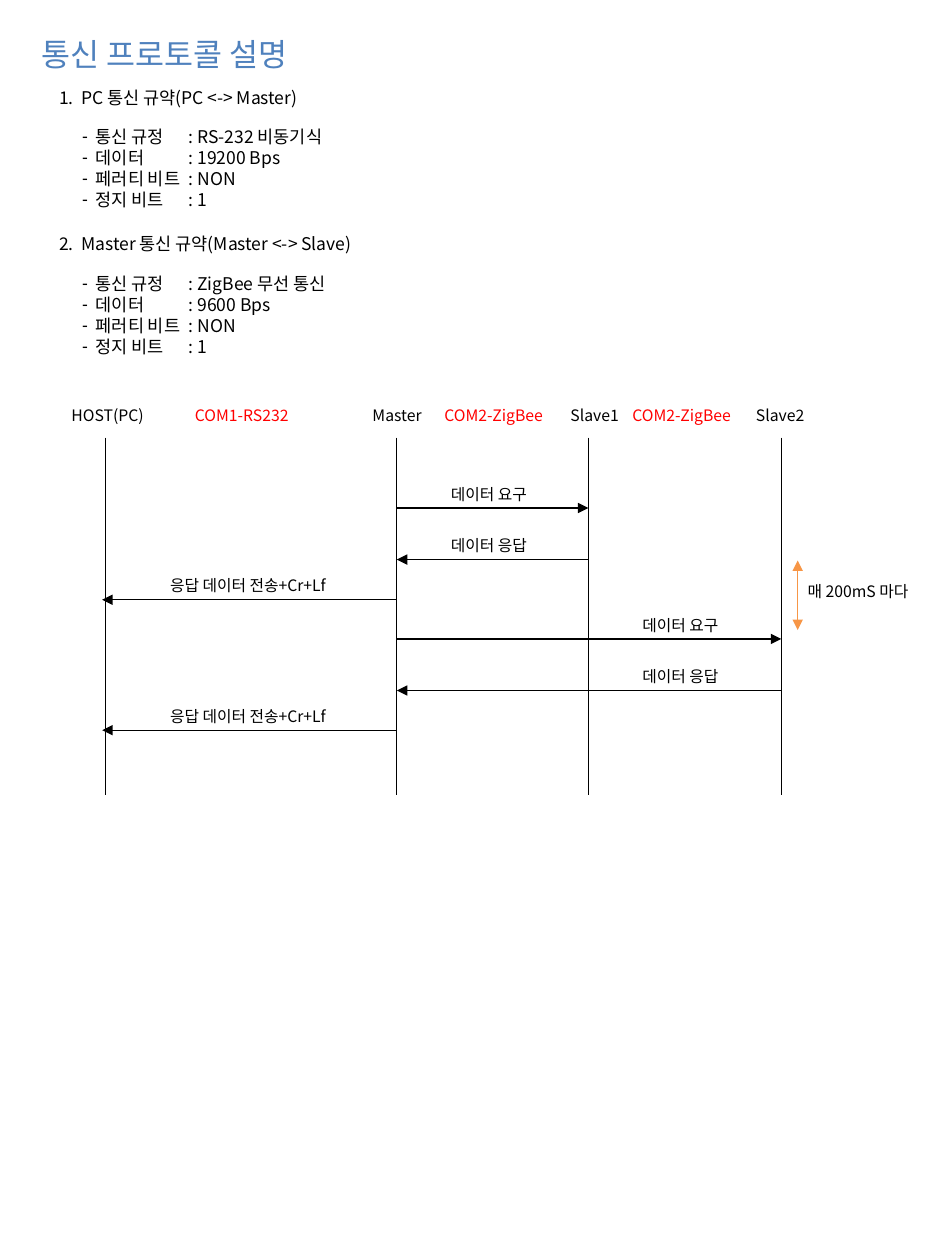
from lxml import etree
from pptx import Presentation
from pptx.dml.color import RGBColor
from pptx.enum.shapes import MSO_CONNECTOR
from pptx.enum.text import MSO_ANCHOR, MSO_AUTO_SIZE, PP_ALIGN
from pptx.oxml.ns import qn
from pptx.util import Cm, Pt

STRAIGHT = MSO_CONNECTOR.STRAIGHT
TOP = MSO_ANCHOR.TOP
NO_FIT = MSO_AUTO_SIZE.NONE
LEFT, JUSTIFY = PP_ALIGN.LEFT, PP_ALIGN.JUSTIFY
BLACK = RGBColor(0x00, 0x00, 0x00)
RED = RGBColor(0xFF, 0x00, 0x00)
BLUE = RGBColor(0x4F, 0x81, 0xBD)
ORANGE = RGBColor(0xF7, 0x96, 0x46)
FONT = "Noto Sans CJK KR"

SECTIONS = [
    ("1.\tPC 통신 규약(PC <-> Master)", "RS-232 비동기식", "19200 Bps"),
    ("2.\tMaster 통신 규약(Master <-> Slave)", "ZigBee 무선 통신", "9600 Bps"),
]
REQUEST, REPLY, FORWARD = "데이터 요구", "데이터 응답", "응답 데이터 전송+Cr+Lf"


def place(shape, left, top, width, height):
    """Move a shape to a box given in centimetres."""
    shape.left, shape.top = Cm(left), Cm(top)
    shape.width, shape.height = Cm(width), Cm(height)


def write(shape, lines, size, color, align=LEFT):
    """Fill a shape with one formatted paragraph per line."""
    frame = shape.text_frame
    frame.text = "\n".join(lines)
    frame.word_wrap = True
    frame.auto_size = NO_FIT
    frame.vertical_anchor = TOP
    for para in frame.paragraphs:
        para.alignment = align
        para.space_before = Pt(0)
        para.line_spacing = Pt(size * 1.2)
        font = para.font
        font.name, font.size, font.bold = FONT, Pt(size), False
        font.color.rgb = color
        east_asian = etree.SubElement(para._p.pPr.find(qn("a:defRPr")), qn("a:ea"))
        east_asian.set("typeface", FONT)


def set_list(para, indent, bullet=None, tab=None):
    """Give a paragraph a hanging indent, a bullet or none, and a tab stop."""
    properties = para._p.get_or_add_pPr()
    properties.set("marL", str(Cm(indent)))
    properties.set("indent", str(-Cm(indent)))
    defaults = properties.find(qn("a:defRPr"))
    mark = etree.Element(qn("a:buChar" if bullet else "a:buNone"))
    if bullet:
        mark.set("char", bullet)
    defaults.addprevious(mark)
    if tab:
        stops = etree.Element(qn("a:tabLst"))
        etree.SubElement(stops, qn("a:tab"), pos=str(Cm(tab)), algn="l")
        defaults.addprevious(stops)


def add_section(heading, body, section, left, top):
    """Fill the heading and list placeholders of one protocol section."""
    title, rule, speed = section
    place(heading, left, top, 8.97, 0.69)
    write(heading, [title], 10, BLACK)
    set_list(heading.text_frame.paragraphs[0], 0.45)
    place(body, left + 0.46, top + 0.79, 7.65, 1.96)
    write(body, [f"통신 규정\t: {rule}", f"데이터\t: {speed}",
                 "페러티 비트\t: NON", "정지 비트\t: 1"], 10, BLACK)
    for para in body.text_frame.paragraphs:
        set_list(para, 0.28, "-", 2.15)


def add_label(page, text, left, top, width, height=0.6, color=BLACK):
    """Add a small justified label."""
    box = page.shapes.add_textbox(0, 0, 0, 0)
    place(box, left, top, width, height)
    write(box, [text], 9, color, JUSTIFY)


def add_line(page, start, end, color=BLACK, width=0.75, ends=()):
    """Add a straight line with triangles at the named ends."""
    line = page.shapes.add_connector(STRAIGHT, *map(Cm, start + end))
    line.line.color.rgb = color
    line.line.width = Pt(width)
    for name in ends:
        etree.SubElement(line.line._get_or_add_ln(), qn(f"a:{name}"), type="triangle")
    etree.SubElement(line._element.spPr, qn("a:effectLst"))


def add_sequence(page, left, top):
    """Draw the message sequence between host, master and slaves."""
    host, master, slave1, slave2 = (left + x for x in (0.94, 6.81, 10.67, 14.56))
    tip = host - 0.07
    for x, name, start, width in [(host, "HOST(PC)", 0, 2.18), (master, "Master", 6.07, 1.85),
                                  (slave1, "Slave1", 10.06, 1.83), (slave2, "Slave2", 13.8, 1.68)]:
        add_label(page, name, left + start, top, width, 0.7)
        add_line(page, (x, top + 0.77), (x, top + 7.98))
    for name, start, width in [("COM1-RS232", 2.49, 2.49), ("COM2-ZigBee", 7.52, 2.79),
                               ("COM2-ZigBee", 11.31, 2.79)]:
        add_label(page, name, left + start, top, width, 0.7, RED)

    for text, start, end, y, label_left, width in [
        (REQUEST, master, slave1, 2.19, 7.65, 2.5),
        (REPLY, slave1, master, 3.23, 7.65, 2.5),
        (FORWARD, master, tip, 4.04, 1.99, 4.14),
        (REQUEST, master, slave2, 4.83, 11.51, 2.5),
        (REPLY, slave2, master, 5.87, 11.51, 2.5),
        (FORWARD, master, tip, 6.67, 1.99, 4.14),
    ]:
        add_line(page, (start, top + y), (end, top + y), ends=["tailEnd"])
        add_label(page, text, left + label_left, top + y - 0.6, width)

    period = left + 14.89
    add_line(page, (period, top + 3.25), (period, top + 4.65), ORANGE, 0.25,
             ["headEnd", "tailEnd"])
    add_label(page, "매 200mS 마다", left + 14.84, top + 3.56, 2.64, 0.7)


def main():
    """Build the protocol page and save it."""
    deck = Presentation()
    deck.slide_width, deck.slide_height = Cm(19.05), Cm(25.4)
    page = deck.slides.add_slide(deck.slide_layouts.get_by_name("Comparison"))
    title, *boxes = page.placeholders
    place(title, 0.58, 0.58, 7.54, 1.02)
    write(title, ["통신 프로토콜 설명"], 18, BLUE)
    for number, section in enumerate(SECTIONS):
        heading, body = boxes[2 * number:2 * number + 2]
        add_section(heading, body, section, 0.94, 1.63 + 2.95 * number)
    for unused in boxes[4:]:
        unused._element.getparent().remove(unused._element)
    add_sequence(page, 1.19, 8.05)
    deck.save("out.pptx")


if __name__ == "__main__":
    main()
